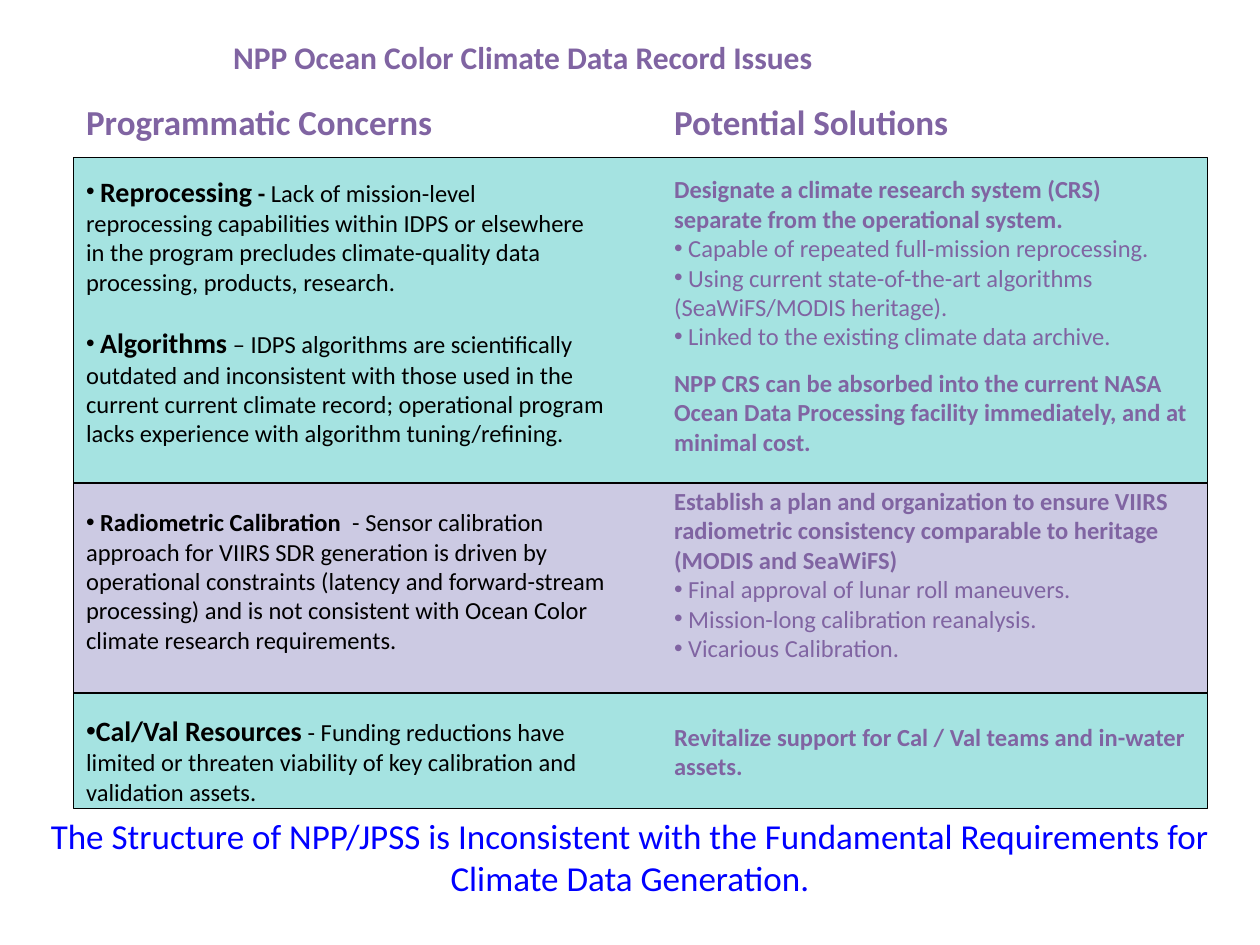
import pptx
import pptx.dml.color
import pptx.enum.shapes
import pptx.enum.text
import pptx.oxml.ns
import pptx.util
from lxml import etree

Pt = pptx.util.Pt
RGBColor = pptx.dml.color.RGBColor
ALIGN = pptx.enum.text.PP_ALIGN

TEAL = RGBColor(0xA5, 0xE3, 0xE1)
LAVENDER = RGBColor(0xCC, 0xCA, 0xE3)
PURPLE = RGBColor(0x80, 0x64, 0xA2)
BLACK = RGBColor(0, 0, 0)
BLUE = RGBColor(0, 0, 0xFF)

FONT = "Calibri"
LEFT, TOP, WIDTH = 42, 90, 648
COLUMN_W, SOLUTIONS_X = 312, 378
BANDS = [(186, TEAL), (120, LAVENDER), (66, TEAL)]
LINE = 17

CONCERNS = [
    (0, True, [(" ", 14, True), ("Reprocessing", 16, True), (" -", 14, True),
               (" Lack of mission-level reprocessing capabilities within IDPS or elsewhere in the program "
                "precludes climate-quality data processing, products, research.", 14, False)]),
    (LINE, True, [(" ", 14, False), ("Algorithms", 16, True),
                  (" – IDPS algorithms are scientifically outdated and inconsistent with those used in the "
                   "current current climate record; operational program lacks experience with algorithm "
                   "tuning/refining.", 14, False)]),
    (2 * LINE, True, [(" ", 14, False), ("Radiometric Calibration", 14, True),
                      ("  - Sensor calibration approach for VIIRS SDR generation is driven by operational "
                       "constraints (latency and forward-stream processing) and is not consistent with Ocean "
                       "Color climate research requirements.", 14, False)]),
    (2 * LINE, True, [("Cal/Val Resources", 16, True),
                      (" - Funding reductions have limited or threaten viability of key calibration and "
                       "validation assets.", 14, False)]),
]


def statement(gap, text):
    return gap, False, [(text, 14, True)]


def point(text):
    return 0, True, [(" " + text, 14, False)]


SOLUTIONS = [
    statement(0, "Designate a climate research system (CRS) separate from the operational system."),
    point("Capable of repeated full-mission reprocessing."),
    point("Using current state-of-the-art algorithms (SeaWiFS/MODIS heritage)."),
    point("Linked to the existing climate data archive."),
    statement(9.8, "NPP CRS can be absorbed into the current NASA Ocean Data Processing facility "
                   "immediately, and at minimal cost."),
    statement(LINE, "Establish a plan and organization to ensure VIIRS radiometric consistency comparable "
                    "to heritage (MODIS and SeaWiFS)"),
    point("Final approval of lunar roll maneuvers."),
    point("Mission-long calibration reanalysis."),
    point("Vicarious Calibration."),
    statement(2 * LINE, "Revitalize support for Cal / Val teams and in-water assets."),
]


def set_bullet(p, bulleted):
    pPr = p._p.get_or_add_pPr()
    pPr.set("marL", "0")
    pPr.set("indent", "0")
    bu = etree.SubElement(pPr, pptx.oxml.ns.qn("a:buChar" if bulleted else "a:buNone"))
    if bulleted:
        bu.set("char", "•")


def fill_text(sp, box, paragraphs, color, align=ALIGN.LEFT, wrap=True):
    sp.left, sp.top, sp.width, sp.height = (Pt(v) for v in box)
    tf = sp.text_frame
    tf.auto_size = pptx.enum.text.MSO_AUTO_SIZE.NONE
    tf.vertical_anchor = pptx.enum.text.MSO_ANCHOR.TOP
    tf.word_wrap = wrap
    for i, (gap, bulleted, runs) in enumerate(paragraphs):
        p = tf.add_paragraph() if i else tf.paragraphs[0]
        p.alignment = align
        p.line_spacing = 1.0
        p.space_before = Pt(gap)
        p.space_after = Pt(0)
        set_bullet(p, bulleted)
        for text, size, bold in runs:
            r = p.add_run()
            r.text = text
            r.font.name = FONT
            r.font.size = Pt(size)
            r.font.bold = bold
            r.font.color.rgb = color


def add_bands(s, left, top, width):
    for height, color in BANDS:
        sp = s.shapes.add_shape(pptx.enum.shapes.MSO_SHAPE.RECTANGLE,
                                Pt(left), Pt(top), Pt(width), Pt(height))
        sp.shadow.inherit = False
        sp.fill.solid()
        sp.fill.fore_color.rgb = color
        sp.line.color.rgb = BLACK
        sp.line.width = Pt(0.75)
        sp.element.getparent().insert(2, sp.element)
        top += height


def fill_column(heading, body, box, title, paragraphs, color):
    x, y, w, h = box
    fill_text(heading, (x, y, w, 32), [(0, False, [(title, 20, True)])], PURPLE, wrap=False)
    fill_text(body, (x, y + 42, w, h - 42), paragraphs, color)


def add_conclusion(s, box):
    sp = s.shapes.add_textbox(*(Pt(v) for v in box))
    text = ("The Structure of NPP/JPSS is Inconsistent with the Fundamental Requirements for "
            "Climate Data Generation.")
    fill_text(sp, box, [(0, False, [(text, 20, False)])], BLUE, ALIGN.CENTER)


def build_slide(prs):
    s = prs.slides.add_slide(prs.slide_layouts.get_by_name("Comparison"))
    title, heading_l, body_l, heading_r, body_r = s.placeholders
    fill_text(title, (126, 18, 490, 36),
              [(0, False, [("NPP Ocean Color Climate Data Record Issues", 18, True)])], PURPLE, wrap=False)
    add_bands(s, LEFT, TOP, WIDTH)
    fill_column(heading_l, body_l, (LEFT, 54, COLUMN_W, 413), "Programmatic Concerns", CONCERNS, BLACK)
    fill_column(heading_r, body_r, (SOLUTIONS_X, 54, COLUMN_W, 398), "Potential Solutions", SOLUTIONS, PURPLE)
    add_conclusion(s, (0, 462, 720, 56))


def main():
    prs = pptx.Presentation()
    prs.slide_width, prs.slide_height = Pt(720), Pt(540)
    build_slide(prs)
    prs.save("out.pptx")


if __name__ == "__main__":
    main()
